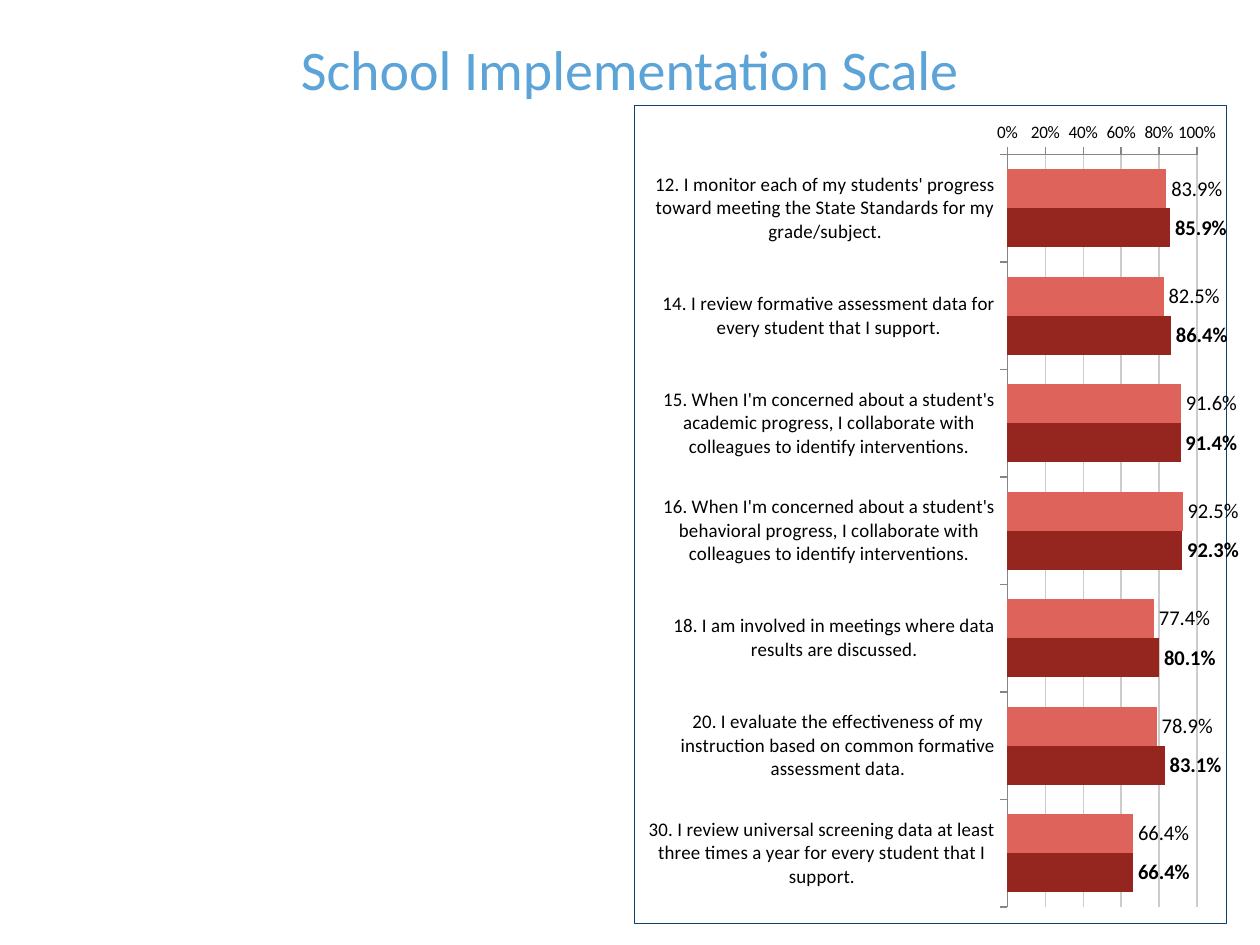
"""Builds the School Implementation Scale slide with its paired bar chart."""
import lxml.etree
import pptx
import pptx.chart.data
import pptx.dml.color
import pptx.enum.chart
import pptx.enum.text
import pptx.oxml
import pptx.oxml.ns
import pptx.util

COLORS = {
    "title": "5CA3D8",
    "text": "000000",
    "background": "FFFFFF",
    "border": "0E4171",
    "grid": "CCCCCC",
    "axis": "868686",
    "first": "DD635B",
    "second": "95261F",
}

STATEMENTS = [
    "12. I monitor each of my students' progress toward meeting the State Standards for my grade/subject.",
    "14. I review formative assessment data for every student that I support.",
    "15. When I'm concerned about a student's academic progress, "
    "I collaborate with colleagues to identify interventions.",
    "16. When I'm concerned about a student's behavioral progress, "
    "I collaborate with colleagues to identify interventions.",
    "18. I am involved in meetings where data results are discussed.",
    "20. I evaluate the effectiveness of my instruction based on common formative assessment data.",
    "30. I review universal screening data at least three times a year for every student that I support.",
]

SERIES = [
    ("Series 1", [0.839, 0.825, 0.916, 0.925, 0.774, 0.789, 0.664], "first", False),
    ("Series 2", [0.859, 0.864, 0.914, 0.923, 0.801, 0.831, 0.664], "second", True),
]


class SlideBuilder:
    def __init__(self, slide, font_name="Calibri"):
        self.slide = slide
        self.font_name = font_name

    def color(self, name):
        return pptx.dml.color.RGBColor.from_string(COLORS[name])

    def style_font(self, font, size, color="text", bold=False):
        font.name = self.font_name
        font.size = pptx.util.Pt(size)
        font.bold = bold
        font.color.rgb = self.color(color)

    def place(self, shape, left, top, width, height):
        shape.left, shape.top = pptx.util.Pt(left), pptx.util.Pt(top)
        shape.width, shape.height = pptx.util.Pt(width), pptx.util.Pt(height)

    def style_line(self, line, color):
        line.color.rgb = self.color(color)
        line.width = pptx.util.Pt(0.75)

    def title(self, text, area, size):
        title = self.slide.shapes.title
        self.place(title, *area)
        frame = title.text_frame
        frame.text = text
        frame.vertical_anchor = pptx.enum.text.MSO_ANCHOR.MIDDLE
        para = frame.paragraphs[0]
        para.alignment = pptx.enum.text.PP_ALIGN.CENTER
        self.style_font(para.font, size, "title")

    def bar_chart(self, categories, series_rows, area, plot_area):
        data = pptx.chart.data.CategoryChartData(number_format="0.0%")
        data.categories = categories
        for name, values, _, _ in series_rows:
            data.add_series(name, values)
        chart = self.slide.shapes.add_chart(
            pptx.enum.chart.XL_CHART_TYPE.BAR_CLUSTERED,
            *(pptx.util.Pt(length) for length in area), data).chart
        chart.has_title = False
        chart.has_legend = False
        self.style_font(chart.font, 10)
        plot = chart.plots[0]
        plot.gap_width = 75
        plot.overlap = 0
        plot.vary_by_categories = False
        for series, (_, _, color, bold) in zip(plot.series, series_rows):
            self.bar_series(series, color, bold)
        self.axes(chart)
        self.chart_frame(chart)
        self.plot_layout(chart, plot_area)

    def bar_series(self, series, color, bold):
        series.invert_if_negative = False
        series.format.fill.solid()
        series.format.fill.fore_color.rgb = self.color(color)
        labels = series.data_labels
        labels.show_value = True
        labels.number_format = "0.0%"
        labels.number_format_is_linked = False
        labels.position = pptx.enum.chart.XL_LABEL_POSITION.OUTSIDE_END
        self.style_font(labels.font, 12, bold=bold)

    def axes(self, chart):
        for axis, size in ((chart.category_axis, 11), (chart.value_axis, 10)):
            axis.major_tick_mark = pptx.enum.chart.XL_TICK_MARK.OUTSIDE
            axis.minor_tick_mark = pptx.enum.chart.XL_TICK_MARK.NONE
            self.style_line(axis.format.line, "axis")
            self.style_font(axis.tick_labels.font, size)
        chart.category_axis.reverse_order = True
        value_axis = chart.value_axis
        value_axis.minimum_scale = 0
        value_axis.maximum_scale = 1
        value_axis.major_unit = 0.2
        value_axis.tick_labels.number_format = "0%"
        value_axis.tick_labels.number_format_is_linked = False
        value_axis.has_major_gridlines = True
        self.style_line(value_axis.major_gridlines.format.line, "grid")

    def chart_frame(self, chart):
        chart_space = chart.element
        frame = pptx.oxml.parse_xml(
            f'<c:spPr {pptx.oxml.ns.nsdecls("c", "a")}>'
            f'<a:solidFill><a:srgbClr val="{COLORS["background"]}"/></a:solidFill>'
            f'<a:ln w="{pptx.util.Pt(0.75)}"><a:solidFill>'
            f'<a:srgbClr val="{COLORS["border"]}"/></a:solidFill></a:ln></c:spPr>')
        chart_space.find(pptx.oxml.ns.qn("c:chart")).addnext(frame)

    def plot_layout(self, chart, plot_area):
        qn = pptx.oxml.ns.qn
        area = chart.element.find(f'{qn("c:chart")}/{qn("c:plotArea")}')
        for existing in area.findall(qn("c:layout")):
            area.remove(existing)
        layout = lxml.etree.Element(qn("c:layout"))
        manual = lxml.etree.SubElement(layout, qn("c:manualLayout"))
        settings = [("layoutTarget", "inner"), ("xMode", "edge"), ("yMode", "edge")]
        settings += zip("xywh", plot_area)
        for tag, value in settings:
            lxml.etree.SubElement(manual, qn(f"c:{tag}")).set("val", str(value))
        area.insert(0, layout)


def main():
    deck = pptx.Presentation()
    deck.slide_width, deck.slide_height = pptx.util.Pt(720), pptx.util.Pt(540)
    builder = SlideBuilder(deck.slides.add_slide(deck.slide_layouts[5]))
    builder.title("School Implementation Scale", (36, 12, 648, 54), 32)
    builder.bar_chart(STATEMENTS, SERIES, (362, 60, 346, 468), (0.63, 0.06, 0.32, 0.92))
    deck.save("out.pptx")


if __name__ == "__main__":
    main()
